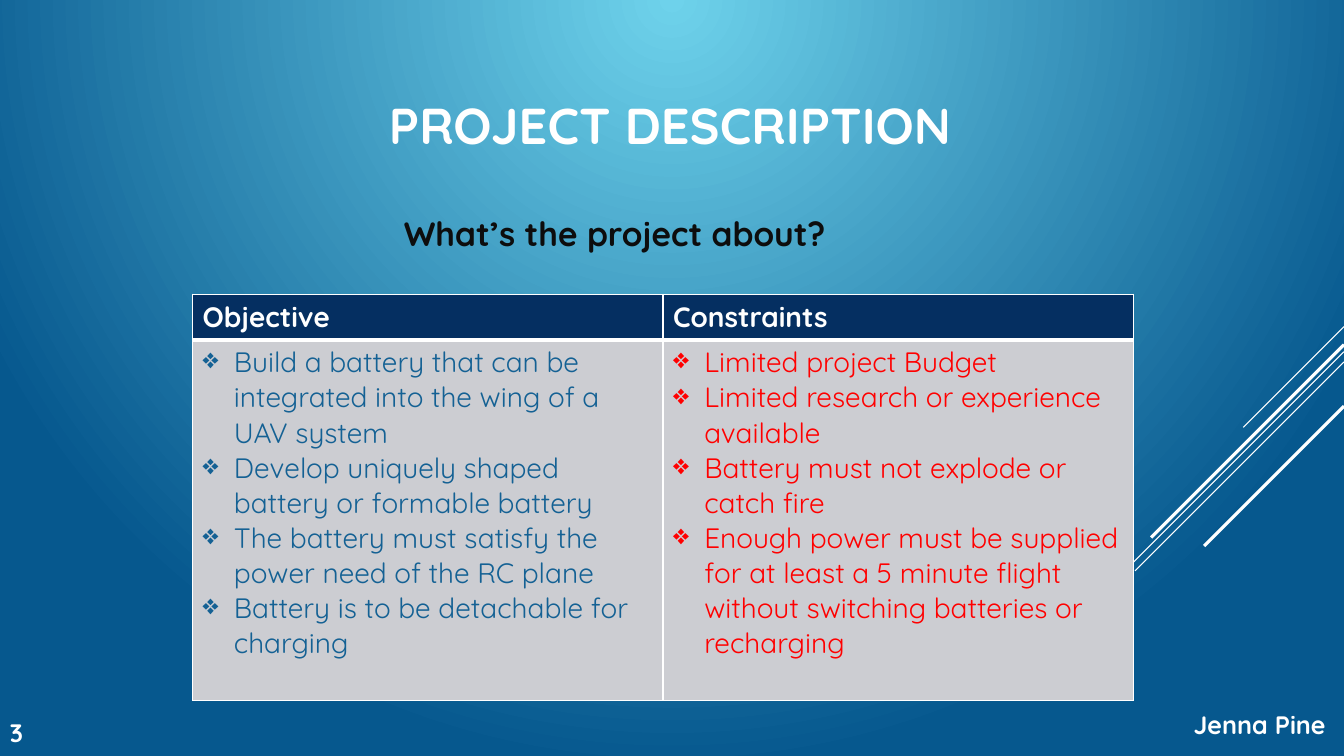
from dataclasses import dataclass

from lxml import etree
from pptx import Presentation
from pptx import util as u
from pptx.dml.color import RGBColor
from pptx.enum import shapes, text
from pptx.oxml import ns


@dataclass(frozen=True)
class Theme:
    font: str = "Quicksand"
    white: str = "FFFFFF"
    ink: str = "0D0D0D"
    navy: str = "052F61"
    blue: str = "146194"
    red: str = "FF0000"
    grey: str = "CCCDD2"
    glow: str = "6ED2EB"
    deep: str = "06588E"
    title: int = 36
    lead: int = 24
    body: int = 20
    small: int = 18


@dataclass(frozen=True)
class Box:
    """Left, top, width and height in percent of the slide."""
    x: float
    y: float
    w: float
    h: float


@dataclass(frozen=True)
class Ray:
    """Diagonal from the right edge: top in % of height, run in % of width."""
    top: float
    run: float
    width: float


@dataclass(frozen=True)
class Label:
    words: str
    box: Box
    size: int
    color: str
    align: text.PP_ALIGN
    anchor: text.MSO_ANCHOR


@dataclass(frozen=True)
class Column:
    head: str
    color: str
    items: tuple[str, ...]


THEME = Theme()
WIDE, HIGH = u.Inches(13.333), u.Inches(7.5)
INDENT = u.Inches(0.31)
ALIGN, ANCHOR = text.PP_ALIGN, text.MSO_ANCHOR

RAYS = [Ray(43.2, 7.5, 0.75), Ray(46.53, 24.45, 0.75), Ray(47.87, 15.55, 0.75),
        Ray(45.6, 14.35, 2.25), Ray(53.73, 10.4, 2.25)]

TITLE = Label("PROJECT DESCRIPTION", Box(14.85, 5.47, 70, 22), THEME.title,
              THEME.white, ALIGN.CENTER, ANCHOR.MIDDLE)
LABELS = [
    Label("Jenna Pine", Box(82.2, 93.2, 17.18, 5.33), THEME.small,
          THEME.white, ALIGN.RIGHT, ANCHOR.MIDDLE),
    Label("3", Box(0, 95.2, 5.63, 4.4), THEME.small,
          THEME.white, ALIGN.LEFT, ANCHOR.BOTTOM),
    Label("What’s the project about? ", Box(10, 27.47, 72.15, 6.67), THEME.lead,
          THEME.ink, ALIGN.CENTER, ANCHOR.TOP),
]

GRID = Box(14.33, 38.93, 70, 53.73)
HEAD = 6
COLUMNS = [
    Column("Objective", THEME.blue, (
        "Build a battery that can be integrated into the wing of a UAV system",
        "Develop uniquely shaped battery or formable battery",
        "The battery must satisfy the power need of the RC plane",
        "Battery is to be detachable for charging")),
    Column("Constraints", THEME.red, (
        "Limited project Budget",
        "Limited research or experience available",
        "Battery must not explode or catch fire",
        "Enough power must be supplied for at least a 5 minute flight "
        "without switching batteries or recharging")),
]


def across(share: float) -> int:
    return round(WIDE * share / 100)


def down(share: float) -> int:
    return round(HIGH * share / 100)


def place(box: Box) -> tuple[int, int, int, int]:
    return across(box.x), down(box.y), across(box.w), down(box.h)


def style(para, size: int, color: str, bold: bool = True) -> None:
    font = para.font
    font.name, font.size, font.bold = THEME.font, u.Pt(size), bold
    font.color.rgb = RGBColor.from_string(color)


def paint(slide) -> None:
    """Radial glow from the middle of the top edge."""
    fill = slide.background.fill
    fill.gradient()
    for stop, color in zip(fill.gradient_stops, (THEME.glow, THEME.deep)):
        stop.color.rgb = RGBColor.from_string(color)
    grad = slide.element.find(".//" + ns.qn("a:gradFill"))
    grad.remove(grad.find(ns.qn("a:lin")))
    way = etree.SubElement(grad, ns.qn("a:path"), path="circle")
    etree.SubElement(way, ns.qn("a:fillToRect"), l="0", t="0", r="0", b="100000")


def draw_ray(slide, ray: Ray) -> None:
    top, run = down(ray.top), across(ray.run)
    line = slide.shapes.add_connector(
        shapes.MSO_CONNECTOR.STRAIGHT, WIDE, top, WIDE - run, top + run)
    line.line.color.rgb = RGBColor.from_string(THEME.white)
    line.line.width = u.Pt(ray.width)
    etree.SubElement(line.element.spPr, ns.qn("a:effectLst"))


def write(shape, label: Label) -> None:
    shape.left, shape.top, shape.width, shape.height = place(label.box)
    frame = shape.text_frame
    frame.text = label.words
    frame.word_wrap = True
    frame.auto_size = text.MSO_AUTO_SIZE.NONE
    frame.vertical_anchor = label.anchor
    para = frame.paragraphs[0]
    para.alignment = label.align
    style(para, label.size, label.color)


def bullet(para) -> None:
    props = para._p.get_or_add_pPr()
    props.set("marL", str(INDENT))
    props.set("indent", str(-INDENT))
    etree.SubElement(props, ns.qn("a:buChar"), char="❖")


def finish(cell, fill: str, thick: str) -> None:
    """Fill a cell and edge it in white, with one thick side."""
    cell.fill.solid()
    cell.fill.fore_color.rgb = RGBColor.from_string(fill)
    props = cell._tc.get_or_add_tcPr()
    for spot, side in enumerate(("lnL", "lnR", "lnT", "lnB")):
        edge = etree.Element(ns.qn("a:" + side),
                             w=str(u.Pt(3 if side == thick else 1)))
        solid = etree.SubElement(edge, ns.qn("a:solidFill"))
        etree.SubElement(solid, ns.qn("a:srgbClr"), val=THEME.white)
        props.insert(spot, edge)


def draw_table(slide) -> None:
    table = slide.shapes.add_table(2, len(COLUMNS), *place(GRID)).table
    table.rows[0].height = down(HEAD)
    table.rows[1].height = down(GRID.h - HEAD)
    for spot, column in enumerate(COLUMNS):
        head, body = table.cell(0, spot), table.cell(1, spot)
        head.text = column.head
        style(head.text_frame.paragraphs[0], THEME.body, THEME.white)
        finish(head, THEME.navy, "lnB")
        body.text = "\n".join(column.items)
        for para in body.text_frame.paragraphs:
            style(para, THEME.body, column.color, bold=False)
            bullet(para)
        finish(body, THEME.grey, "lnT")


def main() -> None:
    deck = Presentation()
    deck.slide_width, deck.slide_height = WIDE, HIGH
    slide = deck.slides.add_slide(deck.slide_layouts[5])

    # Backdrop
    paint(slide)
    for ray in RAYS:
        draw_ray(slide, ray)

    # Title, table and labels
    write(slide.shapes.title, TITLE)
    draw_table(slide)
    for label in LABELS:
        write(slide.shapes.add_textbox(*place(label.box)), label)

    deck.save("out.pptx")


if __name__ == "__main__":
    main()
